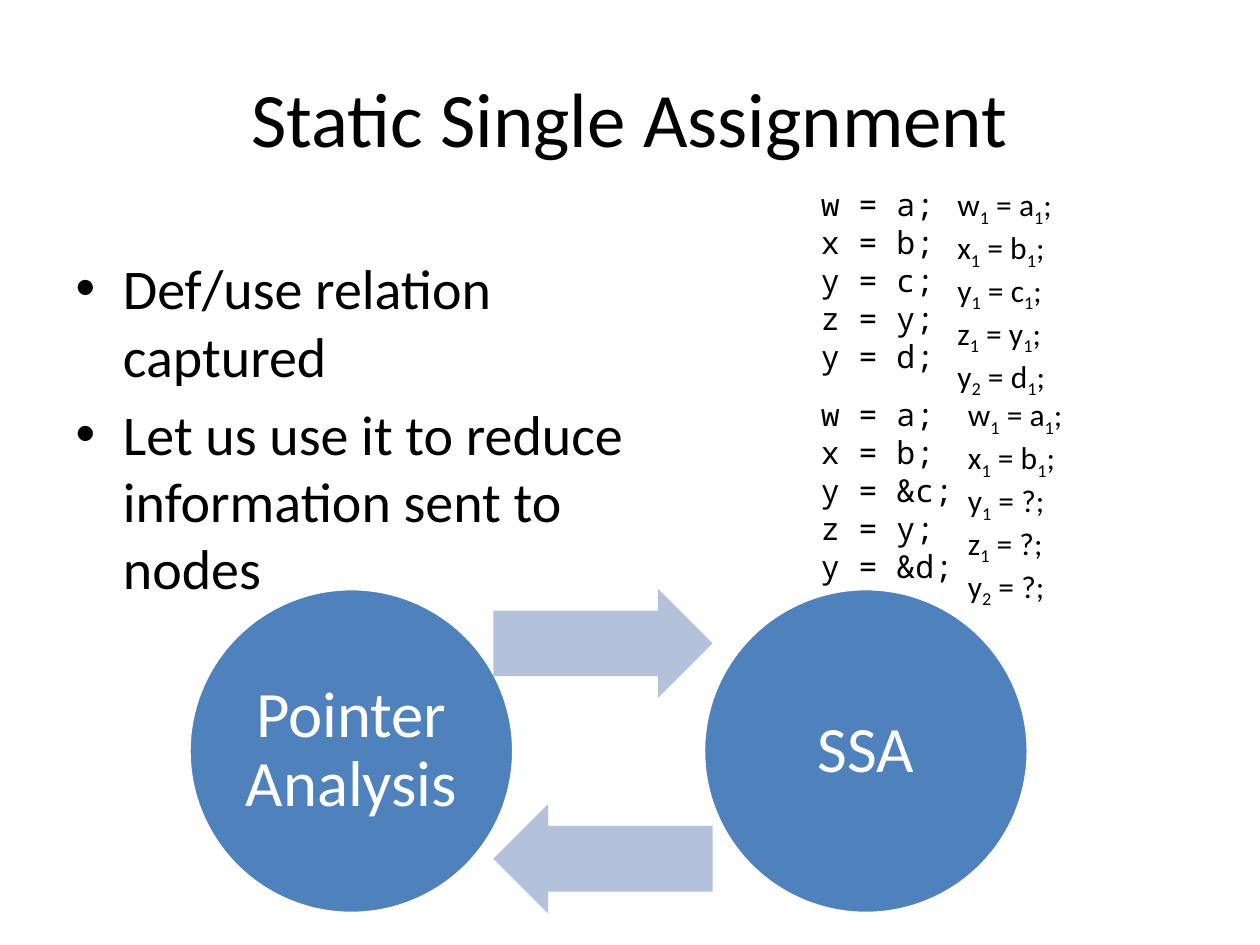
from itertools import groupby

from pptx import Presentation
from pptx.dml.color import RGBColor
from pptx.enum.shapes import MSO_SHAPE
from pptx.enum.text import MSO_ANCHOR, MSO_AUTO_SIZE, PP_ALIGN
from pptx.util import Pt


def color(code):
    return RGBColor.from_string(code)


def apply(target, values):
    for name, value in values.items():
        setattr(target, name, value)


class Deck:
    sans = "Calibri"
    mono = "Noto Sans Mono"
    black = "000000"
    white = "FFFFFF"
    blue = "4F81BD"
    pale = "B3C1DB"

    def __init__(self):
        self.show = Presentation()
        apply(self.show, {"slide_width": Pt(720), "slide_height": Pt(540)})
        self.slide = self.show.slides.add_slide(self.show.slide_layouts[1])

    def place(self, shape, box):
        names = ("left", "top", "width", "height")
        apply(shape, dict(zip(names, map(Pt, box))))

    def style(self, item, size, face=sans, ink=black):
        apply(item.font, {"size": Pt(size), "name": face})
        item.font.color.rgb = color(ink)

    def title(self, text, box):
        shape = self.slide.shapes.title
        self.place(shape, box)
        shape.text_frame.text = text
        self.style(shape.text_frame.paragraphs[0].runs[0], 44)

    def body(self, lines, box, inset):
        shape = self.slide.placeholders[1]
        self.place(shape, box)
        frame = shape.text_frame
        frame.text = "\n".join(lines)
        apply(frame, {"auto_size": MSO_AUTO_SIZE.NONE, "margin_top": Pt(inset)})
        for para in frame.paragraphs:
            self.style(para.runs[0], 32)

    def text(self, lines, box):
        frame = self.slide.shapes.add_textbox(*map(Pt, box)).text_frame
        frame.word_wrap = True
        frame.text = "\n".join(lines)
        return frame.paragraphs

    def code(self, lines, box):
        for para in self.text(lines, box):
            para.line_spacing = Pt(21.7)
            self.style(para.runs[0], 18, self.mono)

    def ssa(self, lines, box):
        # Digits become subscripts
        for para, line in zip(self.text(lines, box), lines):
            para.clear()
            for digit, chars in groupby(line, str.isdigit):
                run = para.add_run()
                run.text = "".join(chars)
                self.style(run, 18)
                if digit:
                    run.font._element.set("baseline", "-25000")

    def shape(self, kind, box, fill):
        shape = self.slide.shapes.add_shape(kind, *map(Pt, box))
        shape.shadow.inherit = False
        shape.fill.solid()
        shape.fill.fore_color.rgb = color(fill)
        return shape

    def circle(self, label, box):
        shape = self.shape(MSO_SHAPE.OVAL, box, self.blue)
        shape.line.width = Pt(2)
        shape.line.color.rgb = color(self.white)
        frame = shape.text_frame
        sides = ("left", "right", "top", "bottom")
        apply(frame, {f"margin_{side}": Pt(3.6) for side in sides})
        apply(frame, {"text": label, "word_wrap": True,
                      "vertical_anchor": MSO_ANCHOR.MIDDLE})
        para = frame.paragraphs[0]
        apply(para, {"alignment": PP_ALIGN.CENTER, "line_spacing": 0.9})
        self.style(para.runs[0], 37, ink=self.white)

    def arrow(self, box, turn):
        shape = self.shape(MSO_SHAPE.RIGHT_ARROW, box, self.pale)
        shape.line.fill.background()
        shape.adjustments[0] = 0.6
        shape.adjustments[1] = 0.5
        shape.rotation = turn

    def save(self):
        self.show.save("out.pptx")


def main():
    deck = Deck()

    # Title and bullets
    deck.title("Static Single Assignment", (36, 21.6, 648, 90))
    deck.body(["Def/use relation captured",
               "Let us use it to reduce information sent to nodes"],
              (36, 96, 354, 356), 49)

    # Code beside its SSA form: without and with pointers
    wide, high = 114, 116.6
    pairs = [
        (102, 540,
         ["w = a;", "x = b;", "y = c;", "z = y;", "y = d;"],
         ["w1 = a1;", "x1 = b1;", "y1 = c1;", "z1 = y1;", "y2 = d1;"]),
        (222, 546,
         ["w = a;", "x = b;", "y = &c;", "z = y;", "y = &d;"],
         ["w1 = a1;", "x1 = b1;", "y1 = ?;", "z1 = ?;", "y2 = ?;"]),
    ]
    for top, left, code, form in pairs:
        deck.code(code, (462, top, wide, high))
        deck.ssa(form, (left, top, wide, high))

    # Cycle of two circles and two arrows
    top, size, tall = 336.4, 185.6, 62.6
    for left, label in ((108, "Pointer Analysis"), (402, "SSA")):
        deck.circle(label, (left, top, size, size))
    for level, turn in ((top, 0), (top + size - tall, 180)):
        deck.arrow((282, level, 2 * tall, tall), turn)

    deck.save()


if __name__ == "__main__":
    main()
